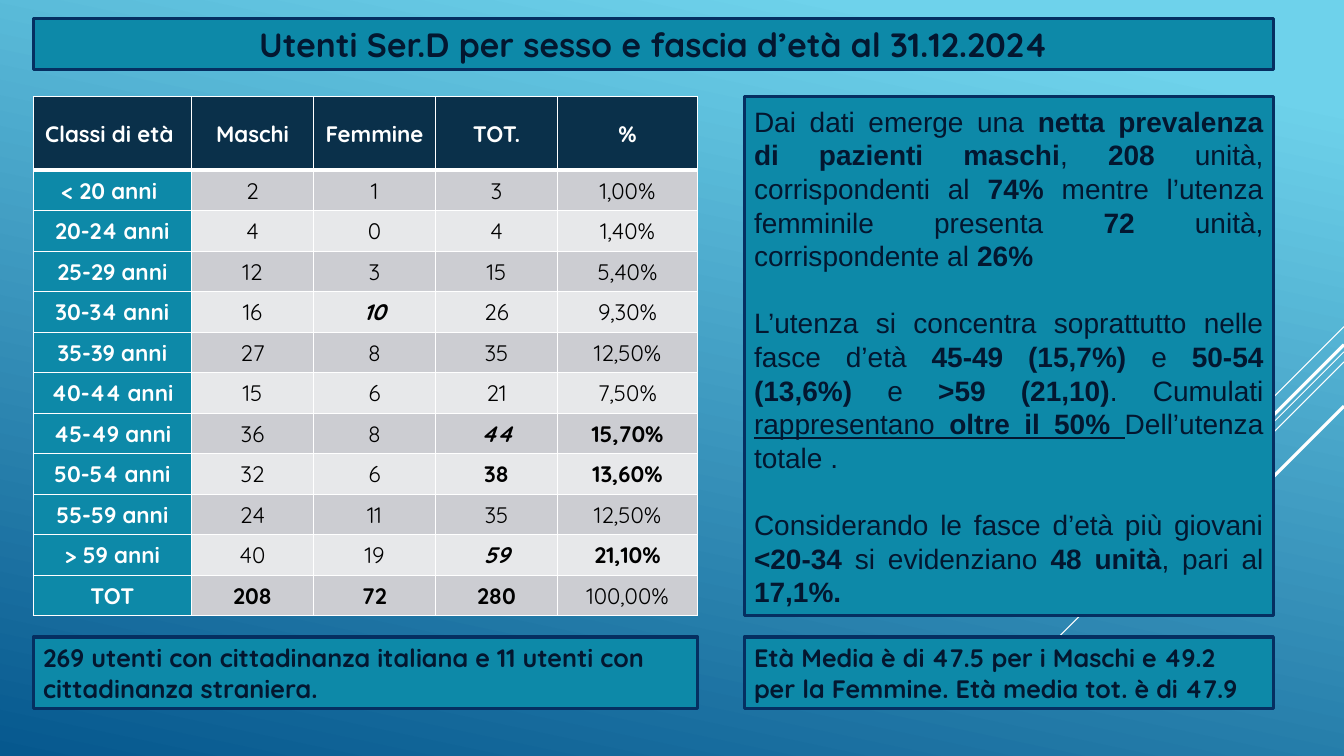
from lxml import etree
from pptx import Presentation
from pptx import util as u
from pptx.dml.color import RGBColor
from pptx.enum import shapes, text
from pptx.oxml import ns

PX = 9144  # 100 px to the inch
WHITE = RGBColor(0xFF, 0xFF, 0xFF)
BLACK = RGBColor(0x00, 0x00, 0x00)
INK = RGBColor(0x03, 0x17, 0x30)
TEAL = RGBColor(0x0D, 0x89, 0xA8)
NAVY = RGBColor(0x05, 0x2F, 0x61)
HEADER = RGBColor(0x0A, 0x30, 0x4A)
BANDS = [RGBColor(0xCC, 0xCD, 0xD2), RGBColor(0xE7, 0xE8, 0xEA)]
SKY = RGBColor(0x6E, 0xD2, 0xEB)
DEEP = RGBColor(0x06, 0x58, 0x8E)
CENTER, LEFT, JUSTIFY = (text.PP_ALIGN.CENTER, text.PP_ALIGN.LEFT,
                         text.PP_ALIGN.JUSTIFY)

# Each ray: right-edge y, horizontal (and vertical) run, width in points
RAYS = [(324, 100, 0.75), (349, 326, 0.75), (359, 207, 0.75),
        (342, 191, 2.25), (403, 139, 2.25)]

COLUMNS = [157, 121, 121, 121, 139]
HEADER_HEIGHT, TABLE_HEIGHT = 73, 515
ROWS = [
    ("Classi di età ", "Maschi", "Femmine", "TOT.", "%"),
    ("< 20 anni ", "2", "1", "3", "1,00%"),
    ("20-24 anni", "4", "0", "4", "1,40%"),
    ("25-29 anni", "12", "3", "15", "5,40%"),
    ("30-34 anni", "16", "10", "26", "9,30%"),
    ("35-39 anni", "27", "8", "35", "12,50%"),
    ("40-44 anni", "15", "6", "21", "7,50%"),
    ("45-49 anni", "36", "8", "44", "15,70%"),
    ("50-54 anni", "32", "6", "38", "13,60%"),
    ("55-59 anni", "24", "11", "35", "12,50%"),
    ("> 59 anni", "40", "19", "59", "21,10%"),
    ("TOT", "208", "72", "280", "100,00%"),
]
BOLD_ITALIC = {(4, 2), (7, 3), (10, 3)}
BOLD = BOLD_ITALIC | {(7, 4), (8, 3), (8, 4), (10, 4), (11, 1), (11, 2), (11, 3)}

# Runs with style letters: b bold, u underlined
COMMENTS = [
    [("Dai dati emerge una ", ""), ("netta prevalenza di pazienti maschi", "b"),
     (", ", ""), ("208", "b"), (" unità, corrispondenti al ", ""), ("74% ", "b"),
     ("mentre l’utenza femminile presenta ", ""), ("72 ", "b"),
     ("unità, corrispondente al ", ""), ("26%", "b")],
    [("L’utenza si concentra soprattutto nelle fasce d’età ", ""),
     ("45-49 (15,7%)", "b"), (" e ", ""), ("50-54 (13,6%)", "b"), (" e ", ""),
     (">59 (21,10)", "b"), (". Cumulati ", ""), ("rappresentano ", "u"),
     ("oltre il 50% ", "bu"), ("Dell’utenza totale .", "")],
    [("Considerando le fasce d’età più giovani ", ""), ("<20-34 ", "b"),
     ("si evidenziano ", ""), ("48 unità", "b"), (", pari al ", ""),
     ("17,1%. ", "b")],
]


def px(n):
    return u.Emu(n * PX)


def add_text(p, words, size=16, font="Quicksand", color=INK, bold=True,
             italic=False, underline=False, align=None):
    r = p.add_run()
    r.text = words
    f = r.font
    f.size, f.name = u.Pt(size), font
    f.bold, f.italic, f.underline = bold, italic, underline
    f.color.rgb = color
    if align is not None:
        p.alignment = align


def format_panel(sp):
    """Teal fill, navy outline; returns the text frame."""
    sp.fill.solid()
    sp.fill.fore_color.rgb = TEAL
    sp.line.color.rgb = NAVY
    sp.line.width = u.Pt(2.25)
    tf = sp.text_frame
    tf.word_wrap = True
    tf.auto_size = text.MSO_AUTO_SIZE.NONE
    tf.vertical_anchor = text.MSO_ANCHOR.MIDDLE
    return tf


def add_panel(slide, left, top, width, height):
    sp = slide.shapes.add_shape(shapes.MSO_SHAPE.RECTANGLE, px(left), px(top),
                                px(width), px(height))
    sp.shadow.inherit = False
    return format_panel(sp)


def add_ray(slide, y, run, width):
    ray = slide.shapes.add_connector(shapes.MSO_CONNECTOR.STRAIGHT, px(1333),
                                     px(y), px(1333 - run), px(y + run))
    ray.line.color.rgb = WHITE
    ray.line.width = u.Pt(width)
    etree.SubElement(ray._element.spPr, ns.qn("a:effectLst"))


def set_borders(cell, bottom=1, top=1):
    tc_pr = cell._tc.get_or_add_tcPr()
    for side, width in (("L", 1), ("R", 1), ("T", top), ("B", bottom)):
        ln = etree.SubElement(tc_pr, ns.qn("a:ln" + side), w=str(u.Pt(width)))
        fill = etree.SubElement(ln, ns.qn("a:solidFill"))
        etree.SubElement(fill, ns.qn("a:srgbClr"), val=str(WHITE))


def add_age_table(slide):
    frame = slide.shapes.add_table(len(ROWS), len(COLUMNS), px(33), px(96),
                                   px(sum(COLUMNS)), px(TABLE_HEIGHT))
    table = frame.table
    for column, width in zip(table.columns, COLUMNS):
        column.width = px(width)
    body_height = px(TABLE_HEIGHT - HEADER_HEIGHT) // (len(ROWS) - 1)
    for i, values in enumerate(ROWS):
        table.rows[i].height = px(HEADER_HEIGHT) if i == 0 else body_height
        for j, value in enumerate(values):
            cell = table.cell(i, j)
            heading = i == 0 or j == 0
            set_borders(cell, bottom=3 if i == 0 else 1, top=3 if i == 1 else 1)
            cell.fill.solid()
            cell.fill.fore_color.rgb = (HEADER if i == 0 else TEAL if j == 0
                                        else BANDS[(i - 1) % 2])
            cell.margin_left = cell.margin_right = cell.margin_top = px(1)
            cell.margin_bottom = 0
            cell.vertical_anchor = text.MSO_ANCHOR.MIDDLE
            add_text(cell.text_frame.paragraphs[0], value, align=CENTER,
                     color=WHITE if heading else BLACK,
                     bold=heading or (i, j) in BOLD,
                     italic=(i, j) in BOLD_ITALIC)


def add_comments(slide):
    tf = add_panel(slide, 738, 96, 525, 515)
    for i, runs in enumerate(COMMENTS):
        p = tf.add_paragraph() if i else tf.paragraphs[0]
        p.line_spacing = u.Pt(24)
        p.space_before = u.Pt(24 if i else 0)
        for words, style in runs:
            add_text(p, words, size=20, font="Arial", bold="b" in style,
                     underline="u" in style, align=JUSTIFY)


def main():
    prs = Presentation()
    prs.slide_width, prs.slide_height = px(1333), px(750)
    slide = prs.slides.add_slide(prs.slide_layouts[5])

    # Background gradient and rays
    fill = slide.background.fill
    fill.gradient()
    fill.gradient_angle = 258
    for stop, color, position in zip(fill.gradient_stops, (SKY, DEEP), (0.1, 1)):
        stop.color.rgb = color
        stop.position = position
    for ray in RAYS:
        add_ray(slide, *ray)

    # Title
    title = slide.shapes.title
    title.left, title.top, title.width, title.height = map(px, (33, 18, 1230, 51))
    add_text(format_panel(title).paragraphs[0],
             "Utenti Ser.D per sesso e fascia d’età al 31.12.2024",
             size=24, align=CENTER)

    # Table and commentary
    add_age_table(slide)
    add_comments(slide)

    # Notes under the two columns
    for left, width, words in (
            (33, 659, "269 utenti con cittadinanza italiana e 11 utenti con "
                      "cittadinanza straniera."),
            (738, 525, "Età Media è di 47.5 per i Maschi e 49.2 per la Femmine. "
                       "Età media tot. è di 47.9")):
        tf = add_panel(slide, left, 632, width, 71)
        add_text(tf.paragraphs[0], words, size=18, align=LEFT)

    prs.save("out.pptx")


if __name__ == "__main__":
    main()
